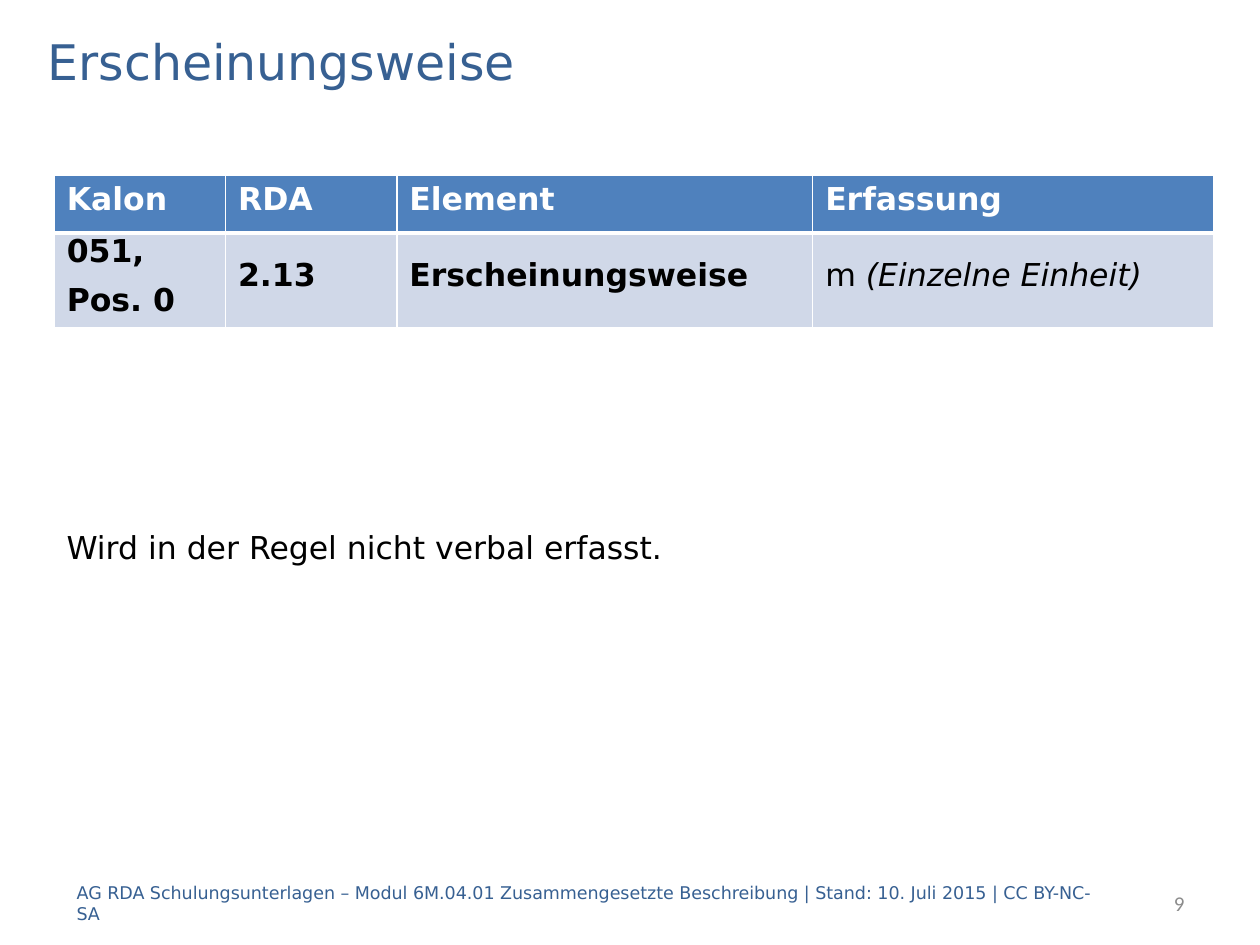
from dataclasses import dataclass

from lxml.etree import SubElement
from pptx import Presentation
from pptx.dml.color import RGBColor
from pptx.enum.text import MSO_ANCHOR, PP_ALIGN
from pptx.oxml.ns import qn
from pptx.util import Inches, Pt


@dataclass(frozen=True)
class Theme:
    font: str = "DejaVu Sans"
    number_font: str = "Calibri"
    title_color: str = "376092"
    text_color: str = "000000"
    number_color: str = "8C8C8C"
    header_fill: str = "4F81BD"
    body_fill: str = "D0D8E8"
    white: str = "FFFFFF"
    title_size: int = 28
    body_size: int = 18
    number_size: int = 12
    footer_size: int = 10


class SlideBuilder:
    def __init__(self, slide, theme):
        self.slide = slide
        self.theme = theme

    def add_run(self, paragraph, text, size, color, font=None, bold=False, italic=False):
        run = paragraph.add_run()
        run.text = text
        run.font.name = font or self.theme.font
        run.font.size = Pt(size)
        run.font.bold = bold
        run.font.italic = italic
        run.font.color.rgb = RGBColor.from_string(color)

    def add_text(self, box, text, size, color, font=None, align=PP_ALIGN.LEFT):
        shape = self.slide.shapes.add_textbox(*map(Inches, box))
        frame = shape.text_frame
        frame.word_wrap = True
        frame.vertical_anchor = MSO_ANCHOR.MIDDLE
        paragraph = frame.paragraphs[0]
        paragraph.alignment = align
        self.add_run(paragraph, text, size, color, font)

    def set_borders(self, cell, widths):
        """Draw white borders; widths maps side letters to points."""
        properties = cell._tc.get_or_add_tcPr()
        for position, (side, width) in enumerate(widths.items()):
            line = properties.makeelement(qn(f"a:ln{side}"), {"w": str(Pt(width))})
            fill = SubElement(line, qn("a:solidFill"))
            SubElement(fill, qn("a:srgbClr"), val=self.theme.white)
            properties.insert(position, line)

    def fill_cell(self, cell, paragraphs, is_header):
        """Write paragraphs, each a list of (text, bold, italic) runs."""
        theme = self.theme
        cell.fill.solid()
        cell.fill.fore_color.rgb = RGBColor.from_string(
            theme.header_fill if is_header else theme.body_fill)
        self.set_borders(cell, {
            "L": 1, "R": 1, "T": 1 if is_header else 3, "B": 3 if is_header else 1})
        if not is_header:
            cell.vertical_anchor = MSO_ANCHOR.MIDDLE
            cell.margin_top = cell.margin_bottom = 0
        frame = cell.text_frame
        for index, runs in enumerate(paragraphs):
            paragraph = frame.add_paragraph() if index else frame.paragraphs[0]
            if not is_header:
                paragraph.line_spacing = Pt(16)
                paragraph.space_before = paragraph.space_after = Pt(6)
            for text, bold, italic in runs:
                self.add_run(paragraph, text, theme.body_size,
                             theme.white if is_header else theme.text_color,
                             bold=bold, italic=italic)

    def add_table(self, left, top, widths, heights, rows):
        frame = self.slide.shapes.add_table(
            len(rows), len(widths), Inches(left), Inches(top),
            Inches(sum(widths)), Inches(sum(heights)))
        table = frame.table
        for column, width in zip(table.columns, widths):
            column.width = Inches(width)
        for row, height in zip(table.rows, heights):
            row.height = Inches(height)
        for row_index, row in enumerate(rows):
            for column_index, paragraphs in enumerate(row):
                self.fill_cell(table.cell(row_index, column_index),
                               paragraphs, row_index == 0)


def bold_lines(*lines):
    return [[(line, True, False)] for line in lines]


def main():
    presentation = Presentation()
    presentation.slide_width = Inches(10)
    presentation.slide_height = Inches(7.5)
    theme = Theme()
    builder = SlideBuilder(
        presentation.slides.add_slide(presentation.slide_layouts[6]), theme)

    builder.add_text((7.91, 6.97, 1.59, 0.4), "9", theme.number_size,
                     theme.number_color, theme.number_font, PP_ALIGN.RIGHT)
    header = [bold_lines(label) for label in ("Kalon", "RDA", "Element", "Erfassung")]
    body = [
        bold_lines("051,", "Pos. 0"),
        bold_lines("2.13"),
        bold_lines("Erscheinungsweise"),
        [[("m ", False, False), ("(Einzelne Einheit)", False, True)]],
    ]
    builder.add_table(0.43, 1.39, [1.36, 1.36, 3.3, 3.18], [0.46, 0.75], [header, body])
    builder.add_text((0.28, 0.2, 9.45, 0.56), "Erscheinungsweise",
                     theme.title_size, theme.title_color)
    builder.add_text(
        (0.51, 6.97, 8.35, 0.4),
        "AG RDA Schulungsunterlagen – Modul 6M.04.01 Zusammengesetzte Beschreibung"
        " | Stand: 10. Juli 2015 | CC BY-NC-SA",
        theme.footer_size, theme.title_color)
    builder.add_text((0.43, 4.06, 9.45, 0.56), "Wird in der Regel nicht verbal erfasst.",
                     theme.body_size, theme.text_color)
    presentation.save("out.pptx")


if __name__ == "__main__":
    main()
